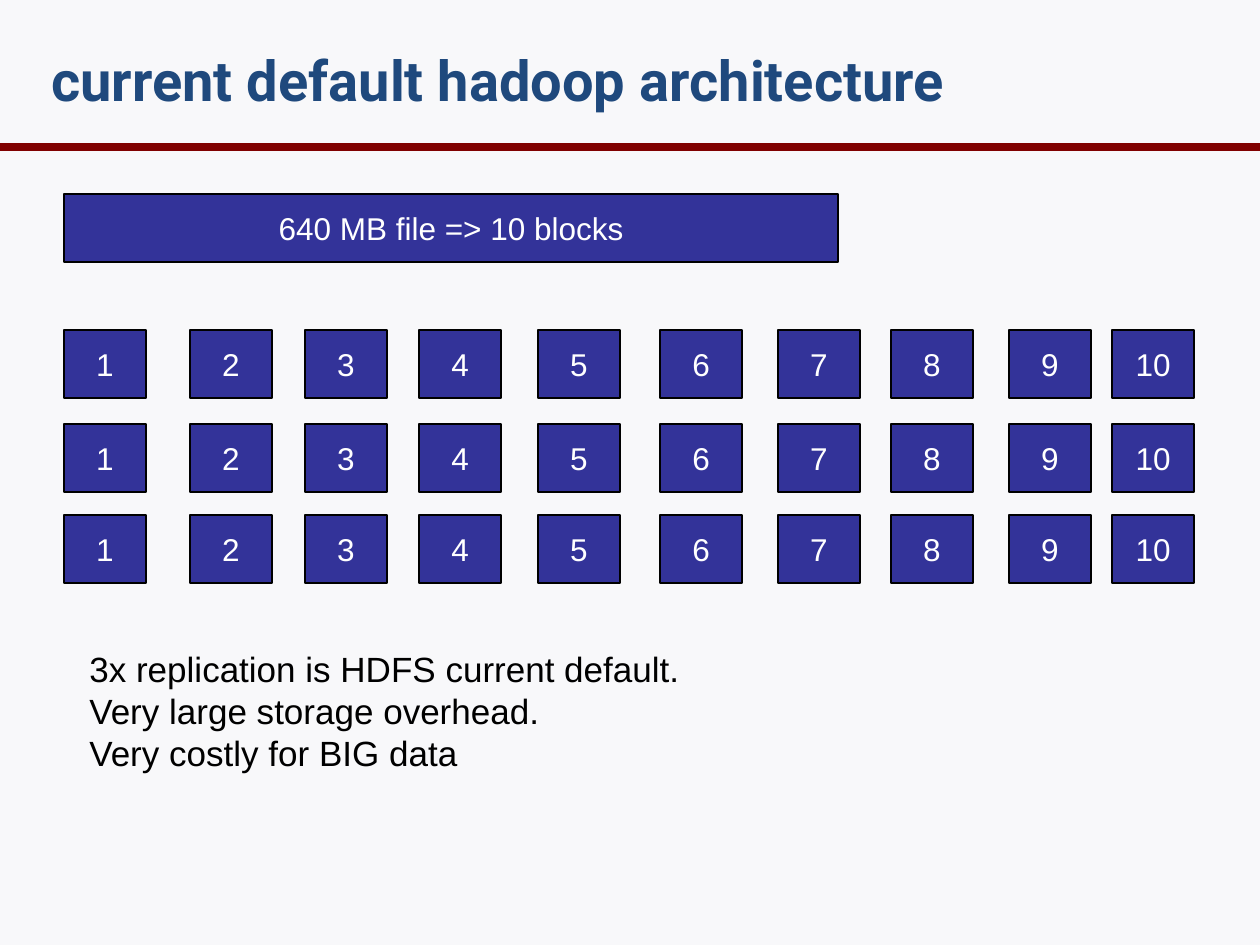
from pptx import Presentation
from pptx.dml.color import RGBColor
from pptx.enum.shapes import MSO_CONNECTOR, MSO_SHAPE
from pptx.enum.text import MSO_ANCHOR as ANCHOR, MSO_AUTO_SIZE as FIT, PP_ALIGN as ALIGN
from pptx.oxml.xmlchemy import OxmlElement
from pptx.util import Emu, Pt

PAPER = RGBColor(0xF8, 0xF8, 0xFA)
MAROON = RGBColor(0x80, 0x00, 0x00)
INDIGO = RGBColor(0x33, 0x33, 0x99)
NAVY = RGBColor(0x1F, 0x49, 0x7D)
BLACK = RGBColor(0, 0, 0)
WHITE = RGBColor(0xFF, 0xFF, 0xFF)

TITLE = {"name": "Roboto", "size": Pt(32), "bold": True}
LABEL = {"name": "Arial", "size": Pt(18)}
BODY = {"name": "Arial", "size": Pt(20)}

SCALE = 914400 / 126


def write(tf, lines, fmt, color, align):
    tf.word_wrap = True
    for i, line in enumerate(lines):
        p = tf.paragraphs[0] if i == 0 else tf.add_paragraph()
        p.alignment = align
        r = p.add_run()
        r.text = line
        for key, value in fmt.items():
            setattr(r.font, key, value)
        r.font.color.rgb = color


def add_block(shapes, x, y, w, text):
    box = [Emu(round(n * SCALE)) for n in (x, y, w, 68)]
    sp = shapes.add_shape(MSO_SHAPE.RECTANGLE, *box)
    sp.shadow.inherit = False
    sp.fill.solid()
    sp.fill.fore_color.rgb = INDIGO
    sp.line.color.rgb = BLACK
    sp.line.width = Pt(0.75)
    sp.text_frame.vertical_anchor = ANCHOR.MIDDLE
    write(sp.text_frame, [text], LABEL, WHITE, ALIGN.CENTER)


prs = Presentation()
prs.slide_width = Emu(round(1260 * SCALE))
prs.slide_height = Emu(round(945 * SCALE))
s = prs.slides.add_slide(prs.slide_layouts[6])
s.background.fill.solid()
s.background.fill.fore_color.rgb = PAPER

rule_y = Emu(round(147 * SCALE))
rule = s.shapes.add_connector(MSO_CONNECTOR.STRAIGHT, 0, rule_y, prs.slide_width, rule_y)
rule.line.color.rgb = MAROON
rule.line.width = Pt(4.5)
rule._element.spPr.append(OxmlElement("a:effectLst"))

columns = [64, 190, 305, 419, 538, 660, 778, 891, 1009, 1112]
for y in (330, 424, 515):
    replica = s.shapes.add_group_shape()
    for number, x in enumerate(columns, 1):
        add_block(replica.shapes, x, y, 82, str(number))

add_block(s.shapes, 64, 194, 774, "640 MB file => 10 blocks")

notes = [
    "3x replication is HDFS current default.",
    "Very large storage overhead.",
    "Very costly for BIG data",
]
texts = [
    ((39, 0, 1134, 158), ["current default hadoop architecture"], TITLE, NAVY, ANCHOR.MIDDLE, FIT.NONE),
    ((77, 641, 1110, 140), notes, BODY, BLACK, ANCHOR.TOP, FIT.SHAPE_TO_FIT_TEXT),
]
for box, lines, fmt, color, anchor, fit in texts:
    tf = s.shapes.add_textbox(*[Emu(round(n * SCALE)) for n in box]).text_frame
    tf.vertical_anchor = anchor
    tf.auto_size = fit
    write(tf, lines, fmt, color, ALIGN.LEFT)

prs.save("out.pptx")
